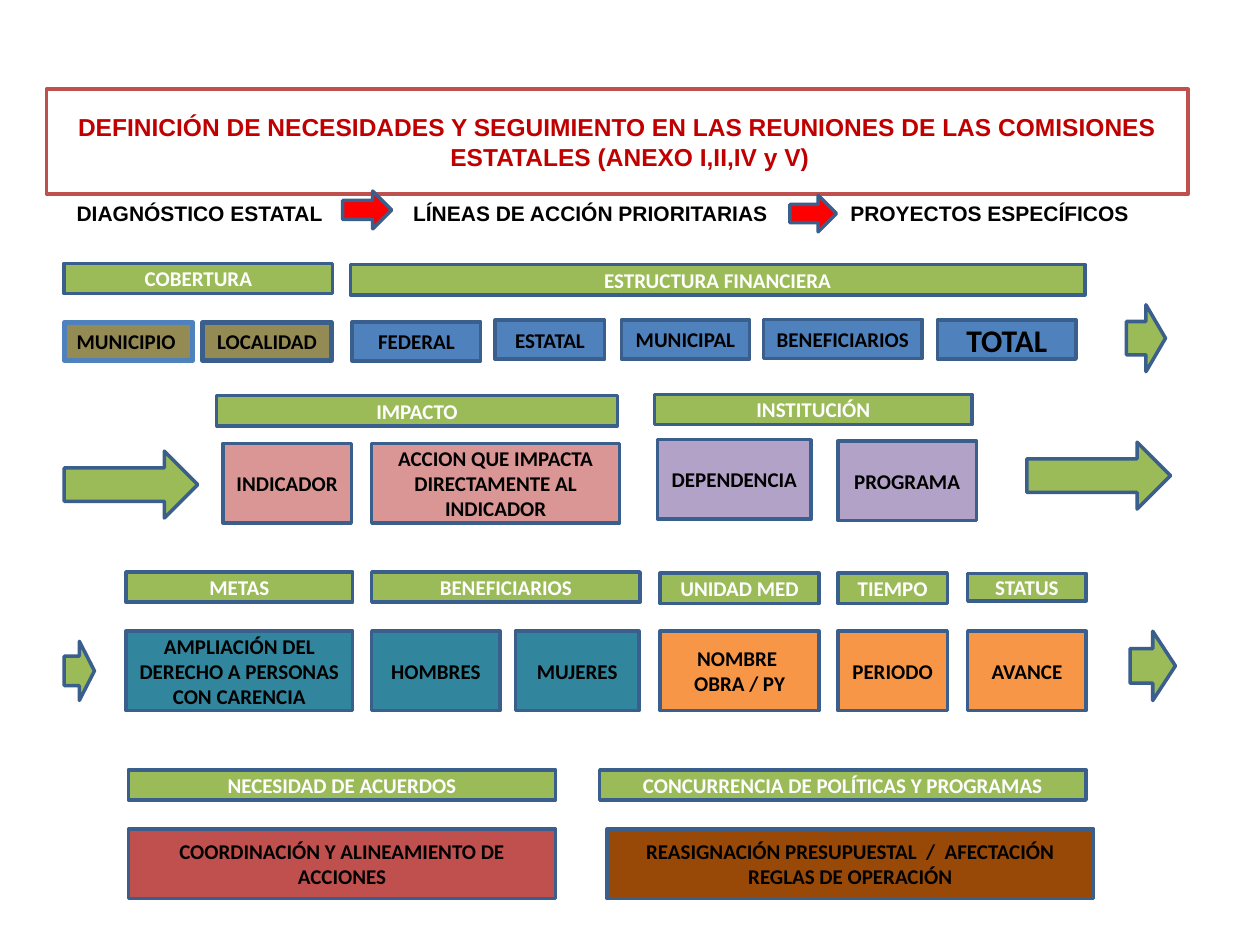
from pptx import Presentation
from pptx.dml.color import RGBColor
from pptx.enum.shapes import MSO_SHAPE as SHAPE
from pptx.enum.text import MSO_ANCHOR as ANCHOR, MSO_AUTO_SIZE as AUTO, PP_ALIGN as ALIGN
from pptx.util import Pt

GREEN, BLUE, TEAL, ORANGE = "9BBB59", "4F81BD", "31859C", "F79646"
OLIVE, PINK, PURPLE = "948A54", "D99694", "B3A2C7"
RED, BROWN, ARROW_RED, TITLE_RED = "C0504D", "984807", "FF0000", "C00000"
OUTLINE, BLACK, WHITE = "3A5F8C", "000000", "FFFFFF"


def rgb(value):
    return RGBColor.from_string(value)


class Diagram:
    def __init__(self, slide, size=12, font="Calibri", line=OUTLINE, line_width=2):
        self.slide = slide
        self.size, self.font = size, font
        self.line, self.line_width = line, line_width

    def paint(self, sp, fill, line=None, width=None):
        sp.fill.solid()
        sp.fill.fore_color.rgb = rgb(fill)
        sp.line.color.rgb = rgb(line or self.line)
        sp.line.width = Pt(width or self.line_width)

    def set_text(self, sp, text, color, align=ALIGN.CENTER, size=None, font=None):
        tf = sp.text_frame
        tf.text = text
        tf.word_wrap = True
        p = tf.paragraphs[0]
        p.alignment = align
        f = p.runs[0].font
        f.name, f.size, f.bold = font or self.font, Pt(size or self.size), True
        f.color.rgb = rgb(color)

    def title(self, text, x, y, w, h):
        sp = self.slide.shapes.title
        sp.left, sp.top, sp.width, sp.height = Pt(x), Pt(y), Pt(w), Pt(h)
        self.paint(sp, WHITE, RED)
        self.set_text(sp, text, TITLE_RED, size=14, font="Arial")
        tf = sp.text_frame
        tf.vertical_anchor, tf.auto_size = ANCHOR.MIDDLE, AUTO.SHAPE_TO_FIT_TEXT
        # Hanging indent
        pPr = tf.paragraphs[0]._p.get_or_add_pPr()
        pPr.set("marL", str(Pt(14.4)))
        pPr.set("indent", str(-Pt(14.4)))

    def shape(self, kind, fill, x, y, w, h, line=None, width=None):
        sp = self.slide.shapes.add_shape(kind, Pt(x), Pt(y), Pt(w), Pt(h))
        sp.shadow.inherit = False
        self.paint(sp, fill, line, width)
        return sp

    def box(self, text, fill, x, y, w, h, color=BLACK, size=None,
            align=ALIGN.CENTER, anchor=ANCHOR.MIDDLE, line=None, width=None):
        sp = self.shape(SHAPE.RECTANGLE, fill, x, y, w, h, line, width)
        self.set_text(sp, text, color, align, size)
        sp.text_frame.vertical_anchor = anchor

    def header(self, text, x, y, w, h=17.3):
        self.box(text, GREEN, x, y, w, h, WHITE)

    def arrow(self, x, y, w, h, fill=GREEN):
        self.shape(SHAPE.RIGHT_ARROW, fill, x, y, w, h)

    def label(self, text, x, y, w, h, wrap=True):
        sp = self.slide.shapes.add_textbox(Pt(x), Pt(y), Pt(w), Pt(h))
        self.set_text(sp, text, BLACK, ALIGN.LEFT, font="Arial")
        sp.text_frame.word_wrap = wrap
        sp.text_frame.auto_size = AUTO.SHAPE_TO_FIT_TEXT


def main():
    prs = Presentation()
    prs.slide_width, prs.slide_height = Pt(720), Pt(540)
    d = Diagram(prs.slides.add_slide(prs.slide_layouts[5]))

    # Title and the three stages
    d.title("DEFINICIÓN DE NECESIDADES Y SEGUIMIENTO EN LAS REUNIONES DE LAS "
            "COMISIONES ESTATALES (ANEXO I,II,IV y V)", 26.6, 60.5, 652.3, 41)
    d.label("DIAGNÓSTICO ESTATAL", 36.7, 110.9, 157, 21.6, wrap=False)
    d.label("LÍNEAS DE ACCIÓN PRIORITARIAS", 229, 110.9, 224, 21.6)
    d.label("PROYECTOS ESPECÍFICOS", 478.8, 110.9, 178, 21.6)
    d.arrow(195.8, 109.2, 28, 21.6, ARROW_RED)
    d.arrow(451.4, 111.6, 26.6, 20.9, ARROW_RED)

    # Green headers: text, left, top, width
    for text, x, y, w in [
        ("COBERTURA", 36.7, 150.5, 153.4),
        ("ESTRUCTURA FINANCIERA", 200.2, 151.2, 419.8),
        ("IMPACTO", 123.8, 226.1, 229),
        ("INSTITUCIÓN", 374.1, 225.4, 181.4),
        ("METAS", 72, 326.9, 129.6),
        ("BENEFICIARIOS", 212.4, 326.9, 153.4),
        ("UNIDAD MED", 377.3, 327.6, 90.7),
        ("TIEMPO", 478.8, 327.6, 62.6),
        ("NECESIDAD DE ACUERDOS", 73.4, 439.9, 244.1),
        ("CONCURRENCIA DE POLÍTICAS Y PROGRAMAS", 342.7, 439.9, 277.9),
    ]:
        d.header(text, x, y, w)
    d.header("STATUS", 553, 327.6, 67.7, 15.8)

    # Coverage and financial structure
    d.box("MUNICIPIO", OLIVE, 36.7, 184.3, 73.4, 21.6, align=ALIGN.LEFT,
          anchor=ANCHOR.TOP, line=BLUE, width=3)
    d.box("LOCALIDAD", OLIVE, 115.9, 184.3, 73.4, 21.6, width=3)
    for text, x, y, w, size in [
        ("FEDERAL", 201.3, 183.9, 73.4, 12),
        ("ESTATAL", 283, 183, 62.6, 12),
        ("MUNICIPAL", 355, 182.9, 73.4, 12),
        ("BENEFICIARIOS", 436.3, 182.5, 90.7, 12),
        ("TOTAL", 535.7, 182.9, 79.2, 18),
    ]:
        d.box(text, BLUE, x, y, w, 22.3, size=size)

    # Impact, institution, goals and works: text, fill, left, top, width
    goals_top = 360.7
    for text, fill, x, y, w in [
        ("INDICADOR", PINK, 127.4, 253.4, 73.4),
        ("ACCION QUE IMPACTA DIRECTAMENTE AL INDICADOR", PINK, 212.4, 253.4, 141.8),
        ("DEPENDENCIA", PURPLE, 375.8, 251.3, 87.8),
        ("PROGRAMA", PURPLE, 478.8, 252, 79.2),
        ("AMPLIACIÓN DEL DERECHO A PERSONAS CON CARENCIA", TEAL, 72, goals_top, 129.6),
        ("HOMBRES", TEAL, 212.4, goals_top, 73.4),
        ("MUJERES", TEAL, 294.5, goals_top, 70.6),
        ("NOMBRE  OBRA / PY", ORANGE, 377.3, goals_top, 90.7),
        ("PERIODO", ORANGE, 478.8, goals_top, 62.6),
        ("AVANCE", ORANGE, 553, goals_top, 67.7),
    ]:
        d.box(text, fill, x, y, w, 45.4)

    # Agreements
    d.box("COORDINACIÓN Y ALINEAMIENTO DE ACCIONES", RED, 73.4, 473.8, 244.1, 39.6)
    d.box("REASIGNACIÓN PRESUPUESTAL  /  AFECTACIÓN REGLAS DE OPERACIÓN", BROWN,
          347, 473.8, 277.9, 39.6)

    # Flow arrows between the rows
    for bounds in [
        (643.7, 174.2, 22.3, 38.2),
        (36.7, 257.8, 76.3, 38.2),
        (586.8, 252.7, 82.1, 38.2),
        (36.7, 366.5, 17.3, 33.8),
        (645.8, 360.7, 25.9, 39.6),
    ]:
        d.arrow(*bounds)

    prs.save("out.pptx")


if __name__ == "__main__":
    main()
